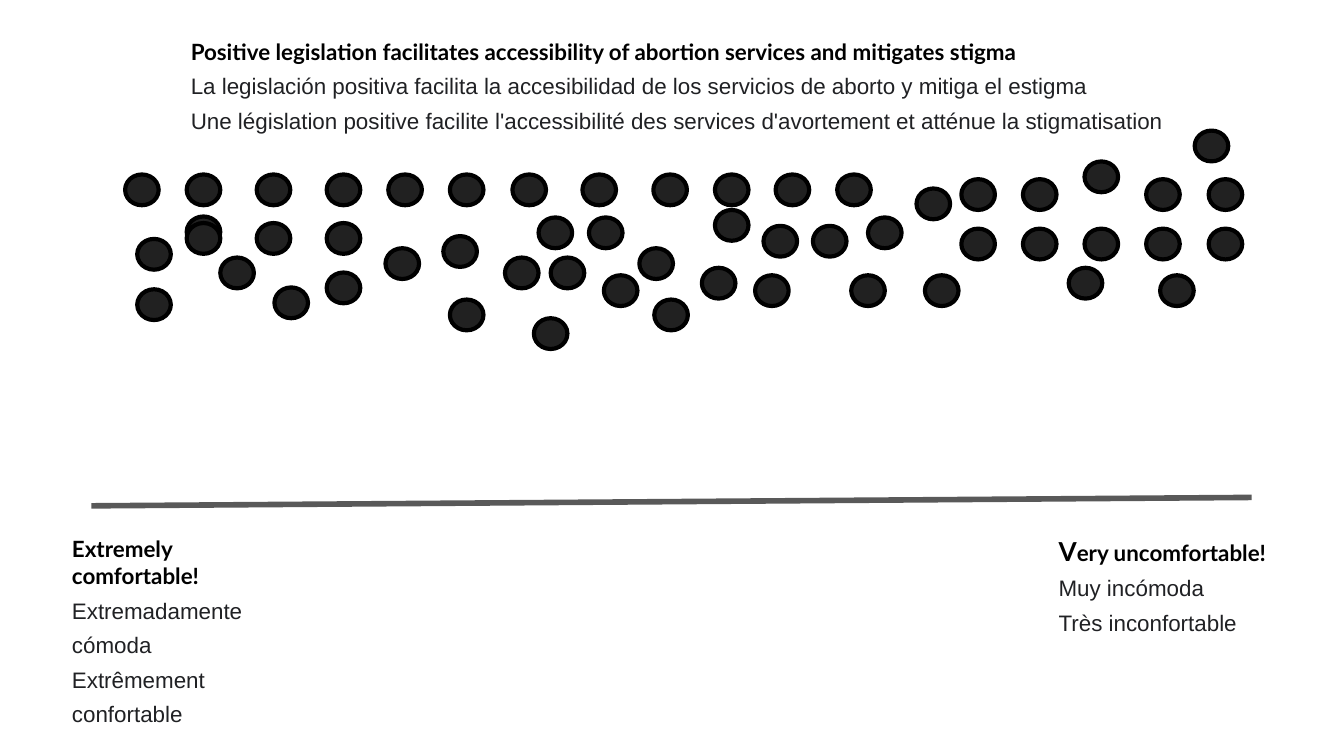
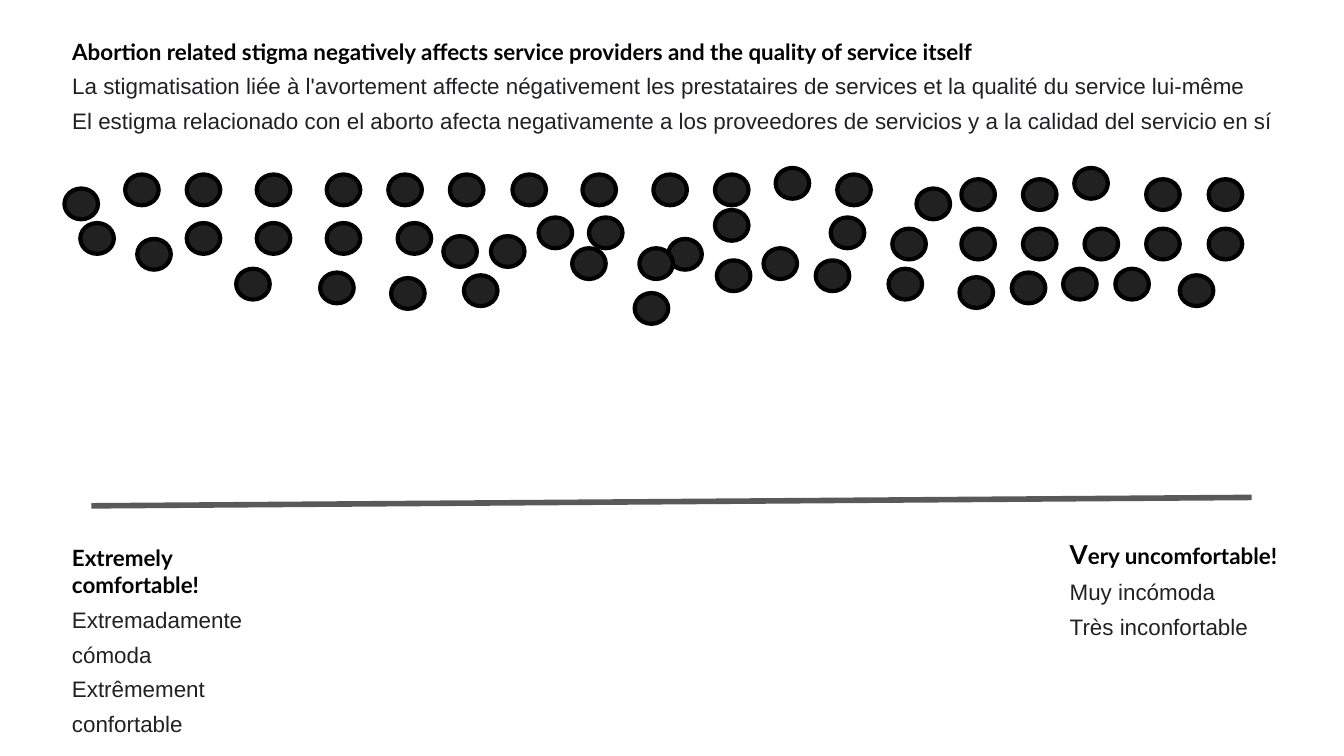
import dataclasses

import pptx
import pptx.dml.color
import pptx.enum.shapes
import pptx.enum.text
import pptx.oxml.ns
import pptx.util
from lxml import etree

Pt = pptx.util.Pt


def rgb(value):
    return pptx.dml.color.RGBColor.from_string(value)


@dataclasses.dataclass(frozen=True)
class Theme:
    strong: str = "000000"
    body: str = "202124"
    dot: str = "212121"
    scale: str = "595959"
    strong_font: str = "Lato"
    body_font: str = "Arial"
    size: float = 12
    initial_size: float = 14
    spacing: float = 1.29
    inset: float = 7.2
    dot_width: float = 18
    dot_height: float = 16.5
    dot_line: float = 2.25
    scale_line: float = 3


SHARED_DOTS = {
    93.5: [67, 100, 137.5, 175, 208, 241, 274.5, 312, 350, 383, 448.5],
    96: [515, 548, 614, 647.5],
    101: [491],
    112.5: [383],
    116.5: [288.5, 315.5],
    119.5: [100, 137.5, 175],
    122.5: [515, 548, 581, 614, 647.5],
    126.5: [237.5],
    128: [73.5],
    133: [342.5],
}

COMFORTABLE = ["Extremely comfortable!", "Extremadamente cómoda", "Extrêmement confortable"]
UNCOMFORTABLE = ["Very uncomfortable!", "Muy incómoda", "Très inconfortable"]

SLIDES = [
    dict(
        title=[
            "Positive legislation facilitates accessibility of abortion services and mitigates stigma",
            "La legislación positiva facilita la accesibilidad de los servicios de aborto y mitiga el estigma",
            "Une législation positive facilite l'accessibilité des services d'avortement et atténue la stigmatisation",
        ],
        title_box=(95, 13, 545, 32.5),
        comfortable_box=(31.5, 279.5, 116, 39),
        uncomfortable_box=(560, 279.5, 139.5, 39),
        dots={
            70: [640],
            86.5: [581],
            93.5: [415.5],
            116: [100],
            116.5: [465],
            121: [409, 435.5],
            133: [206.5],
            138: [118, 270.5, 295],
            143.5: [376, 572.5],
            146: [175],
            147.5: [323.5, 404.5, 456, 495.5, 621.5],
            154: [147],
            155: [73.5],
            160.5: [241, 350.5],
            170.5: [286],
        },
    ),
    dict(
        title=[
            "Abortion related stigma negatively affects service providers and the quality of service itself",
            "La stigmatisation liée à l'avortement affecte négativement les prestataires de services "
            "et la qualité du service lui-même",
            "El estigma relacionado con el aborto afecta negativamente a los proveedores de servicios "
            "y a la calidad del servicio en sí",
        ],
        title_box=(31.5, 13, 669, 32.5),
        comfortable_box=(31.5, 284.5, 119.5, 39),
        uncomfortable_box=(566, 281.5, 130.5, 39),
        dots={
            90: [415.5, 575.5],
            101: [34.5],
            116.5: [445],
            119.5: [43, 213],
            122.5: [478],
            126.5: [263],
            128: [358],
            133: [306.5, 409],
            139.5: [384, 437],
            144: [126.5, 476, 569.5, 597.5],
            146: [171.5, 542],
            147.5: [248.5, 632],
            148.5: [514],
            149: [209.5],
            157: [340],
        },
    ),
]


class Deck:
    def __init__(self, theme, width, height):
        self.theme = theme
        self.prs = pptx.Presentation()
        self.prs.slide_width, self.prs.slide_height = Pt(width), Pt(height)
        self.s = None

    def add_slide(self):
        self.s = self.prs.slides.add_slide(self.prs.slide_layouts[5])

    def title(self, lines, box):
        sp = self.s.shapes.title
        for name, value in zip(("left", "top", "width", "height"), box):
            setattr(sp, name, Pt(value))
        self.fill_text(sp.text_frame, lines)

    def label(self, lines, box, big_initial=False):
        sp = self.s.shapes.add_textbox(*map(Pt, box))
        self.fill_text(sp.text_frame, lines, big_initial)

    def fill_text(self, tf, lines, big_initial=False):
        t = self.theme
        inset = Pt(t.inset)
        frame = dict(
            word_wrap=True,
            auto_size=pptx.enum.text.MSO_AUTO_SIZE.NONE,
            vertical_anchor=pptx.enum.text.MSO_ANCHOR.TOP,
            margin_left=inset,
            margin_top=inset,
            margin_right=inset,
            margin_bottom=inset,
        )
        for name, value in frame.items():
            setattr(tf, name, value)
        for i, line in enumerate(lines):
            p = tf.add_paragraph() if i else tf.paragraphs[0]
            p.alignment = pptx.enum.text.PP_ALIGN.LEFT
            if i:
                p.line_spacing = t.spacing
                self.add_text(p, line, t.size, t.body_font, t.body, False)
                continue
            if big_initial:
                self.add_text(p, line[0], t.initial_size, t.strong_font, t.strong, True)
                line = line[1:]
            self.add_text(p, line, t.size, t.strong_font, t.strong, True)

    def add_text(self, p, text, size, font, color, bold):
        r = p.add_run()
        r.text = text
        for name, value in dict(size=Pt(size), name=font, bold=bold).items():
            setattr(r.font, name, value)
        r.font.color.rgb = rgb(color)

    def scale(self, start, end):
        sp = self.s.shapes.add_connector(
            pptx.enum.shapes.MSO_CONNECTOR.STRAIGHT, *map(Pt, start + end)
        )
        sp.line.color.rgb = rgb(self.theme.scale)
        sp.line.width = Pt(self.theme.scale_line)
        etree.SubElement(sp._element.spPr, pptx.oxml.ns.qn("a:effectLst"))

    def dots(self, rows):
        for top, lefts in rows.items():
            for left in lefts:
                self.dot(left, top)

    def dot(self, left, top):
        t = self.theme
        box = left, top, t.dot_width, t.dot_height
        sp = self.s.shapes.add_shape(pptx.enum.shapes.MSO_SHAPE.OVAL, *map(Pt, box))
        sp.shadow.inherit = False
        sp.fill.solid()
        sp.fill.fore_color.rgb = rgb(t.dot)
        sp.line.color.rgb = rgb(t.strong)
        sp.line.width = Pt(t.dot_line)


def main():
    deck = Deck(Theme(), 720, 405)
    for item in SLIDES:
        deck.add_slide()
        deck.title(item["title"], item["title_box"])
        deck.scale((49, 271), (670.5, 266.5))
        deck.label(COMFORTABLE, item["comfortable_box"])
        deck.label(UNCOMFORTABLE, item["uncomfortable_box"], big_initial=True)
        deck.dots(item["dots"])
        deck.dots(SHARED_DOTS)
    deck.prs.save("out.pptx")


if __name__ == "__main__":
    main()
